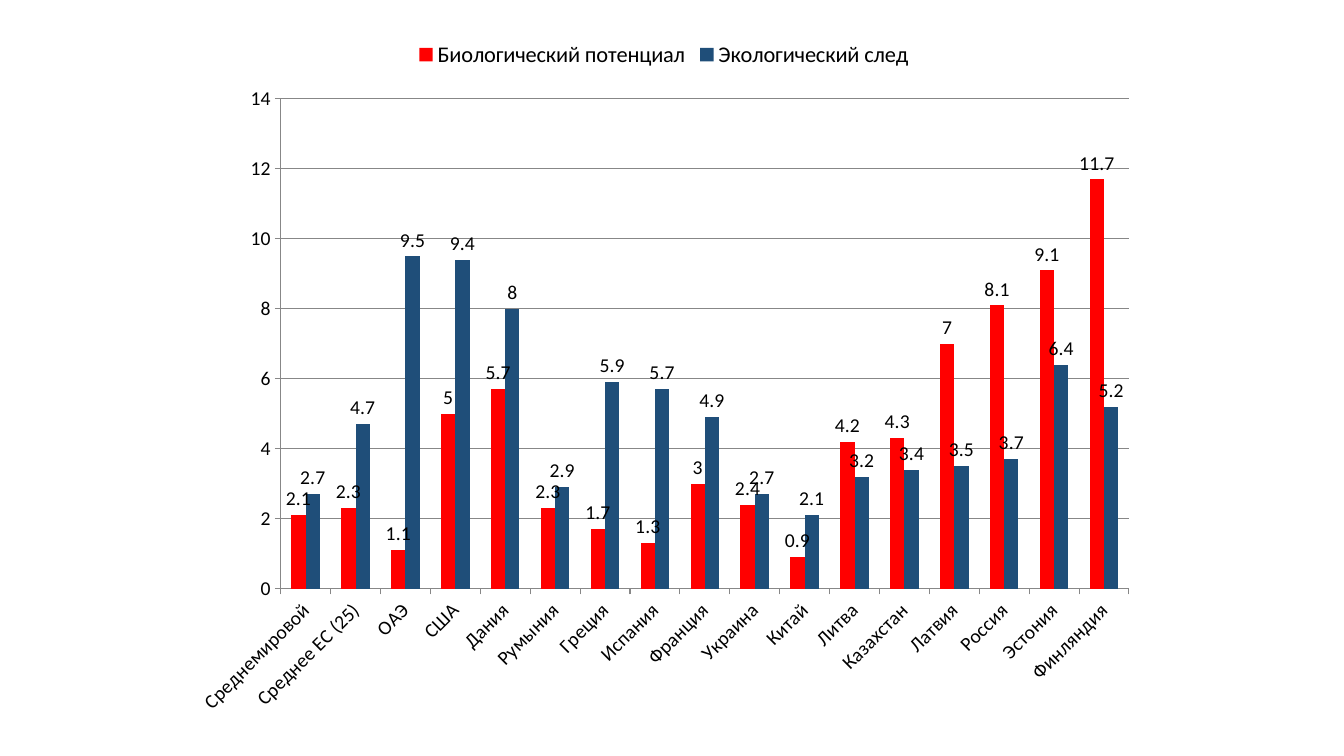
from pptx import Presentation
from pptx import util as u
from pptx.chart.data import CategoryChartData
from pptx.dml.color import RGBColor
from pptx.enum import chart as charts

COLORS = {"potential": "FF0000", "footprint": "1F4E79", "text": "000000", "line": "878787"}

# country: (biological potential, ecological footprint)
COUNTRIES = {
    "Среднемировой": (2.1, 2.7),
    "Среднее ЕС (25)": (2.3, 4.7),
    "ОАЭ": (1.1, 9.5),
    "США": (5, 9.4),
    "Дания": (5.7, 8),
    "Румыния": (2.3, 2.9),
    "Греция": (1.7, 5.9),
    "Испания": (1.3, 5.7),
    "Франция": (3, 4.9),
    "Украина": (2.4, 2.7),
    "Китай": (0.9, 2.1),
    "Литва": (4.2, 3.2),
    "Казахстан": (4.3, 3.4),
    "Латвия": (7, 3.5),
    "Россия": (8.1, 3.7),
    "Эстония": (9.1, 6.4),
    "Финляндия": (11.7, 5.2),
}
SERIES = {"Биологический потенциал": "potential", "Экологический след": "footprint"}


class SlideBuilder:
    font_name = "Calibri"

    def __init__(self, slide):
        self.slide = slide

    def color(self, name):
        return RGBColor.from_string(COLORS[name])

    def style_font(self, font, size):
        font.name = self.font_name
        font.size = u.Pt(size)
        font.color.rgb = self.color("text")

    def style_line(self, line):
        line.color.rgb = self.color("line")
        line.width = u.Pt(0.75)

    def add_column_chart(self, left, top, width, height, table, series_colors):
        data = CategoryChartData()
        data.categories = list(table)
        for name, values in zip(series_colors, zip(*table.values())):
            data.add_series(name, values)
        chart = self.slide.shapes.add_chart(
            charts.XL_CHART_TYPE.COLUMN_CLUSTERED,
            u.Inches(left), u.Inches(top), u.Inches(width), u.Inches(height), data,
        ).chart
        chart.has_title = False
        self.style_font(chart.font, 14)
        self.style_legend(chart)
        self.style_axes(chart)
        self.style_columns(chart.plots[0], series_colors.values())

    def style_legend(self, chart):
        chart.has_legend = True
        chart.legend.position = charts.XL_LEGEND_POSITION.TOP
        chart.legend.include_in_layout = False
        self.style_font(chart.legend.font, 16)

    def style_axes(self, chart):
        for axis in (chart.category_axis, chart.value_axis):
            axis.major_tick_mark = charts.XL_TICK_MARK.OUTSIDE
            axis.minor_tick_mark = charts.XL_TICK_MARK.NONE
            self.style_line(axis.format.line)
            self.style_font(axis.tick_labels.font, 14)
        chart.category_axis._element.txPr.bodyPr.set("rot", "-2700000")
        value_axis = chart.value_axis
        value_axis.minimum_scale, value_axis.maximum_scale = 0, 14
        value_axis.major_unit = 2
        value_axis.has_major_gridlines = True
        self.style_line(value_axis.major_gridlines.format.line)

    def style_columns(self, plot, color_names):
        plot.gap_width = 150
        plot.overlap = 0
        plot.vary_by_categories = False
        for series, color_name in zip(plot.series, color_names):
            series.invert_if_negative = False
            series.format.fill.solid()
            series.format.fill.fore_color.rgb = self.color(color_name)
            labels = series.data_labels
            labels.show_value = True
            labels.position = charts.XL_LABEL_POSITION.OUTSIDE_END
            self.style_font(labels.font, 14)


def main():
    presentation = Presentation()
    presentation.slide_width = u.Inches(13.33)
    presentation.slide_height = u.Inches(7.5)
    builder = SlideBuilder(presentation.slides.add_slide(presentation.slide_layouts[6]))
    builder.add_column_chart(1.78, 0.29, 9.61, 6.93, COUNTRIES, SERIES)
    presentation.save("out.pptx")


if __name__ == "__main__":
    main()
